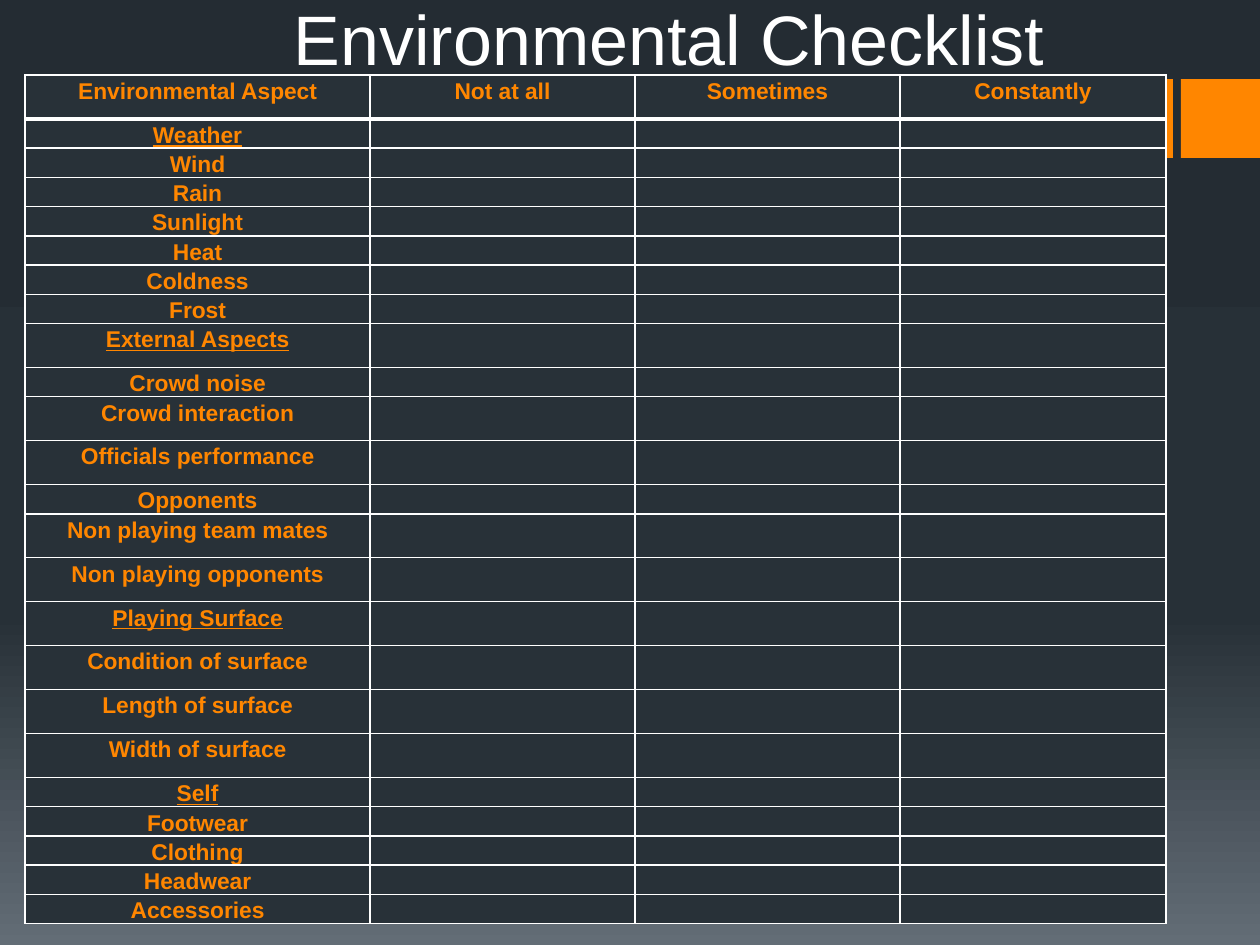
from copy import deepcopy

from lxml import etree
from pptx import Presentation, util as u
from pptx.dml.color import RGBColor
from pptx.enum import shapes, text
from pptx.oxml import ns

PX = 914400 // 126
ORANGE, WHITE, CELL = "FF8600", "FFFFFF", "283138"
SHORT, TALL = 29, 44


def color(value):
    return RGBColor.from_string(value)


def add_border(cell, side, points):
    """Draw one white edge; call before the cell is filled, as lines come first."""
    line = etree.SubElement(cell._tc.get_or_add_tcPr(), ns.qn(f"a:ln{side}"), w=str(u.Pt(points)))
    fill = etree.SubElement(line, ns.qn("a:solidFill"))
    etree.SubElement(fill, ns.qn("a:srgbClr"), val=WHITE)


presentation = Presentation()
presentation.slide_width, presentation.slide_height = u.Inches(10), u.Inches(7.5)
slide = presentation.slides.add_slide(presentation.slide_layouts[5])

# Background gradient, dark at the top
background = slide.background.fill
background.gradient()
background.gradient_angle = 270
stop_list = slide.element.find(".//" + ns.qn("a:gsLst"))
stop_list.append(deepcopy(stop_list[-1]))
stops = [(0, "242C33"), (0.65, "273037"), (1, "636D76")]
for stop, (position, value) in zip(background.gradient_stops, stops):
    stop.position = position
    stop.color.rgb = color(value)

# Accent bars at the right edge
for left, width in [(1162, 11), (1181, 79)]:
    bar = slide.shapes.add_shape(
        shapes.MSO_SHAPE.RECTANGLE, left * PX, 79 * PX, width * PX, 79 * PX)
    bar.shadow.inherit = False
    bar.fill.solid()
    bar.fill.fore_color.rgb = color(ORANGE)
    bar.line.fill.background()

# Title
title = slide.shapes.title
title_box = {"left": 213, "top": -24, "width": 912, "height": 110}
for name, value in title_box.items():
    setattr(title, name, value * PX)
title.text_frame.text = "Environmental Checklist"
title.text_frame.auto_size = text.MSO_AUTO_SIZE.NONE
title.text_frame.vertical_anchor = text.MSO_ANCHOR.BOTTOM
paragraph = title.text_frame.paragraphs[0]
paragraph.alignment = text.PP_ALIGN.CENTER
font = paragraph.runs[0].font
font.name, font.size = "Arial", u.Pt(40)
font.color.rgb = color(WHITE)

# Checklist rows: label and height; section headings are underlined
headings = {"Weather", "External Aspects", "Playing Surface", "Self"}
header = ["Environmental Aspect", "Not at all", "Sometimes", "Constantly"]
rows = [
    (header[0], TALL),
    ("Weather", SHORT),
    ("Wind", SHORT),
    ("Rain", SHORT),
    ("Sunlight", SHORT),
    ("Heat", SHORT),
    ("Coldness", SHORT),
    ("Frost", SHORT),
    ("External Aspects", TALL),
    ("Crowd noise", SHORT),
    ("Crowd interaction", TALL),
    ("Officials performance", TALL),
    ("Opponents", SHORT),
    ("Non playing team mates", TALL),
    ("Non playing opponents", TALL),
    ("Playing Surface", TALL),
    ("Condition of surface", TALL),
    ("Length of surface", TALL),
    ("Width of surface", TALL),
    ("Self", SHORT),
    ("Footwear", SHORT),
    ("Clothing", SHORT),
    ("Headwear", SHORT),
    ("Accessories", SHORT),
]
column_widths = [345, 265, 265, 266]
table = slide.shapes.add_table(
    len(rows), len(column_widths), 25 * PX, 75 * PX,
    sum(column_widths) * PX, sum(height for _, height in rows) * PX).table
table.horz_banding = False
for column, width in zip(table.columns, column_widths):
    column.width = width * PX

cell_format = {"margin_left": 4 * PX, "margin_right": 4 * PX, "margin_top": 0, "margin_bottom": 0}
paragraph_format = {"alignment": text.PP_ALIGN.CENTER, "line_spacing": 1.15}
font_format = {"name": "Arial", "size": u.Pt(13), "bold": True}

for row_index, (label, height) in enumerate(rows):
    table.rows[row_index].height = height * PX
    labels = header if row_index == 0 else [label, "", "", ""]
    for column_index, words in enumerate(labels):
        cell = table.cell(row_index, column_index)
        for name, value in cell_format.items():
            setattr(cell, name, value)
        for side in "LRTB":
            under_header = (row_index, side) in [(0, "B"), (1, "T")]
            add_border(cell, side, 3 if under_header else 1)
        cell.fill.solid()
        cell.fill.fore_color.rgb = color(CELL)
        paragraph = cell.text_frame.paragraphs[0]
        if not words:
            # A small end mark keeps empty cells from stretching the row
            etree.SubElement(paragraph._p, ns.qn("a:endParaRPr"), sz="1000")
            continue
        for name, value in paragraph_format.items():
            setattr(paragraph, name, value)
        run = paragraph.add_run()
        run.text = words
        for name, value in font_format.items():
            setattr(run.font, name, value)
        run.font.underline = words in headings
        run.font.color.rgb = color(ORANGE)

presentation.save("out.pptx")
